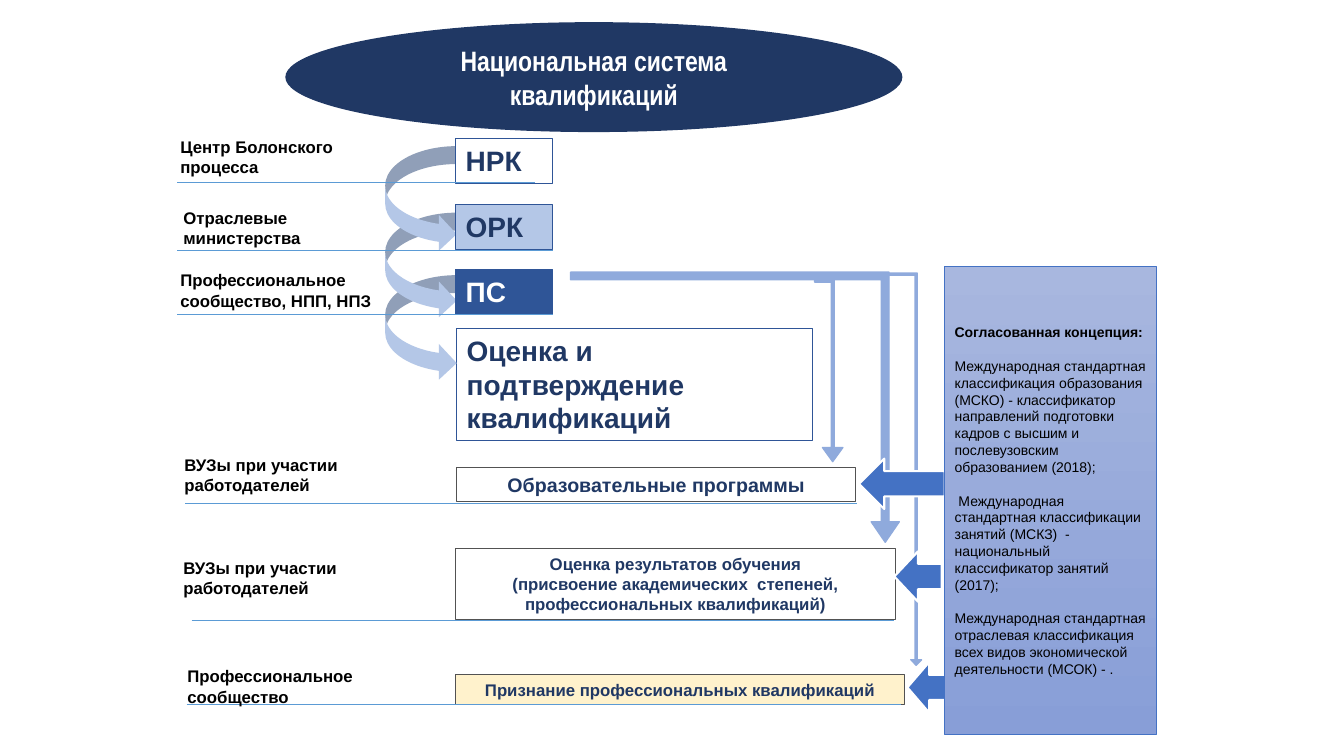
"""Builds the slide on the national qualifications system."""
from dataclasses import dataclass
from typing import Optional

from pptx import Presentation
from pptx.dml.color import RGBColor
from pptx.enum import shapes, text
from pptx.oxml import ns, xmlchemy
from pptx.util import Inches, Pt


@dataclass(frozen=True)
class Theme:
    font: str = "Arial"
    title_font: str = "Arial Narrow"
    navy: str = "203864"
    blue: str = "2F5597"
    accent: str = "4472C4"
    light: str = "B4C7E7"
    arrow: str = "8FAADC"
    rule: str = "5B9BD5"
    grey: str = "525252"
    cream: str = "FFF2CC"
    white: str = "FFFFFF"
    black: str = "000000"
    panel_top: str = "A8B7DF"
    panel_bottom: str = "889ED7"
    large: int = 20
    medium: int = 14
    small: int = 12
    tiny: int = 10


@dataclass(frozen=True)
class Frame:
    left: float
    top: float
    width: float
    height: float

    def lengths(self) -> tuple:
        return tuple(Inches(v) for v in (self.left, self.top, self.width, self.height))


@dataclass(frozen=True)
class Box:
    frame: Frame
    lines: tuple
    size: int
    fill: Optional[str]
    border: str
    color: str
    centered: bool = False


@dataclass(frozen=True)
class Label:
    frame: Frame
    lines: tuple


@dataclass(frozen=True)
class Rule:
    left: float
    right: float
    y: float


@dataclass(frozen=True)
class BentArrow:
    frame: Frame
    adjustments: tuple


THEME = Theme()
KIND = shapes.MSO_SHAPE
TITLE = "Национальная система квалификаций"

LEVELS = (
    Box(Frame(4.52, 1.37, 0.96, 0.45), ("НРК",), THEME.large, THEME.white, THEME.blue, THEME.navy),
    Box(Frame(4.52, 2.03, 0.96, 0.45), ("ОРК",), THEME.large, THEME.light, THEME.blue, THEME.navy),
    Box(Frame(4.52, 2.67, 0.96, 0.45), ("ПС",), THEME.large, THEME.blue, THEME.blue, THEME.white),
)
ASSESSMENT = Box(Frame(4.53, 3.26, 3.53, 1.11), ("Оценка и подтверждение квалификаций",),
                 THEME.large, THEME.white, THEME.blue, THEME.navy)
OUTCOMES = (
    Box(Frame(4.53, 4.64, 3.96, 0.34), ("Образовательные программы",),
        THEME.medium, THEME.white, THEME.grey, THEME.navy, True),
    Box(Frame(4.52, 5.44, 4.36, 0.71),
        ("Оценка результатов обучения",
         "(присвоение академических  степеней, профессиональных квалификаций)"),
        THEME.small, None, THEME.grey, THEME.navy, True),
    Box(Frame(4.52, 6.69, 4.45, 0.3), ("Признание профессиональных квалификаций",),
        THEME.small, THEME.cream, THEME.grey, THEME.navy, True),
)
UNIVERSITIES = ("ВУЗы при участии", "работодателей")
LABELS = (
    Label(Frame(1.69, 1.31, 2.09, 0.5), ("Центр Болонского процесса",)),
    Label(Frame(1.72, 2.01, 2.2, 0.52), ("Отраслевые министерства",)),
    Label(Frame(1.69, 2.63, 2.2, 0.52), ("Профессиональное сообщество, НПП, НПЗ",)),
    Label(Frame(1.73, 4.46, 3.34, 0.5), UNIVERSITIES),
    Label(Frame(1.72, 5.48, 3.26, 0.5), UNIVERSITIES),
    Label(Frame(1.76, 6.56, 2.2, 0.5), ("Профессиональное", "сообщество")),
)
RULES = (
    Rule(1.76, 5.31, 1.81), Rule(1.76, 5.48, 2.48), Rule(1.76, 5.48, 3.12),
    Rule(1.84, 8.5, 4.99), Rule(1.9, 8.87, 6.15), Rule(1.85, 8.94, 6.99),
)
CURVED_TOPS = (2.73, 2.11, 1.45)
BENT_ARROWS = (
    BentArrow(Frame(8.08, 2.77, 0.28, 1.81), (0.102, 0.361, 0.5)),
    BentArrow(Frame(8.42, 2.71, 0.72, 3.89), (0.028, 0.074, 0.076)),
    BentArrow(Frame(5.66, 2.7, 3.26, 2.68), (0.028, 0.052, 0.076)),
)
PANEL_ARROWS = (
    Frame(8.52, 4.55, 0.85, 0.5), Frame(8.87, 5.47, 0.47, 0.5), Frame(9.0, 6.57, 0.43, 0.5),
)
CONCEPT = (
    "Согласованная концепция:",
    "Международная стандартная классификация образования (МСКО) - классификатор "
    "направлений подготовки кадров с высшим и послевузовским образованием (2018);",
    " Международная стандартная классификации занятий (МСКЗ)  - национальный "
    "классификатор занятий (2017);",
    "Международная стандартная отраслевая классификация всех видов экономической "
    "деятельности (МСОК) - .",
)


def write_text(shape, lines: tuple, *, size: int, color: str, font: str = THEME.font,
               bold: bool = True, align=text.PP_ALIGN.LEFT,
               anchor=text.MSO_ANCHOR.TOP, gap: float = 0) -> None:
    """Fill a shape with one formatted paragraph per line."""
    frame = shape.text_frame
    frame.word_wrap = True
    frame.auto_size = text.MSO_AUTO_SIZE.NONE
    frame.vertical_anchor = anchor
    for index, line in enumerate(lines):
        paragraph = frame.paragraphs[0] if index == 0 else frame.add_paragraph()
        paragraph.alignment = align
        paragraph.line_spacing = 1.0
        paragraph.space_before = Pt(gap if index else 0)
        run = paragraph.add_run()
        run.text = line
        run.font.name = font
        run.font.size = Pt(size)
        run.font.bold = bold
        run.font.color.rgb = RGBColor.from_string(color)


def add_shape(slide, kind, frame: Frame, fill: Optional[str],
              border: Optional[str] = None, weight: float = 0.75):
    """Add a flat preset shape."""
    shape = slide.shapes.add_shape(kind, *frame.lengths())
    shape.shadow.inherit = False
    if fill:
        shape.fill.solid()
        shape.fill.fore_color.rgb = RGBColor.from_string(fill)
    else:
        shape.fill.background()
    if border:
        shape.line.color.rgb = RGBColor.from_string(border)
        shape.line.width = Pt(weight)
    else:
        shape.line.fill.background()
    return shape


def add_title(slide) -> None:
    """Set the title over its ellipse."""
    title = slide.shapes.title
    title.left, title.top, title.width, title.height = Frame(3.73, 0.38, 4.32, 0.78).lengths()
    ellipse = add_shape(slide, KIND.OVAL, Frame(2.83, 0.22, 6.12, 1.09), THEME.navy)
    title.element.addprevious(ellipse.element)
    write_text(title, (TITLE,), size=THEME.large, color=THEME.white, font=THEME.title_font,
               align=text.PP_ALIGN.CENTER, anchor=text.MSO_ANCHOR.MIDDLE)


def add_box(slide, box: Box) -> None:
    """Add a bordered box with its text."""
    shape = add_shape(slide, KIND.RECTANGLE, box.frame, box.fill, box.border)
    align = text.PP_ALIGN.CENTER if box.centered else text.PP_ALIGN.LEFT
    write_text(shape, box.lines, size=box.size, color=box.color, align=align)


def add_rule(slide, rule: Rule) -> None:
    """Add a thin horizontal line."""
    y = Inches(rule.y)
    line = slide.shapes.add_connector(shapes.MSO_CONNECTOR.STRAIGHT,
                                      Inches(rule.left), y, Inches(rule.right), y)
    line.line.color.rgb = RGBColor.from_string(THEME.rule)
    line.line.width = Pt(0.5)
    line.element.spPr.append(xmlchemy.OxmlElement("a:effectLst"))


def add_bent_arrow(slide, arrow: BentArrow) -> None:
    """Add an arrow that runs right and then down."""
    shape = add_shape(slide, KIND.BENT_UP_ARROW, arrow.frame, THEME.arrow, THEME.arrow, 1)
    for index, value in enumerate(arrow.adjustments):
        shape.adjustments[index] = value
    shape.element.spPr.find(ns.qn("a:xfrm")).set("flipV", "1")


def add_panel(slide) -> None:
    """Add the gradient panel with the agreed concept."""
    panel = add_shape(slide, KIND.RECTANGLE, Frame(9.37, 2.64, 2.1, 4.65),
                      THEME.panel_top, THEME.accent, 0.5)
    panel.fill.gradient()
    panel.fill.gradient_angle = 270
    for stop, color in zip(panel.fill.gradient_stops, (THEME.panel_top, THEME.panel_bottom)):
        stop.color.rgb = RGBColor.from_string(color)
    write_text(panel, CONCEPT, size=THEME.tiny, color=THEME.black, bold=False,
               anchor=text.MSO_ANCHOR.MIDDLE, gap=12)
    panel.text_frame.paragraphs[0].runs[0].font.bold = True


def main() -> None:
    """Build and save the presentation."""
    presentation = Presentation()
    presentation.slide_width, presentation.slide_height = Inches(13.33), Inches(7.5)
    slide = presentation.slides.add_slide(presentation.slide_layouts[5])
    add_title(slide)
    add_box(slide, ASSESSMENT)
    for top in CURVED_TOPS:
        add_shape(slide, KIND.CURVED_RIGHT_ARROW, Frame(3.82, top, 0.71, 1.05), THEME.light)
    for box in LEVELS + OUTCOMES:
        add_box(slide, box)
    for rule in RULES:
        add_rule(slide, rule)
    for label in LABELS:
        shape = slide.shapes.add_textbox(*label.frame.lengths())
        write_text(shape, label.lines, size=THEME.small, color=THEME.black)
    for arrow in BENT_ARROWS:
        add_bent_arrow(slide, arrow)
    for frame in PANEL_ARROWS:
        add_shape(slide, KIND.LEFT_ARROW, frame, THEME.accent, THEME.white, 1.5)
    add_panel(slide)
    presentation.save("out.pptx")


if __name__ == "__main__":
    main()
